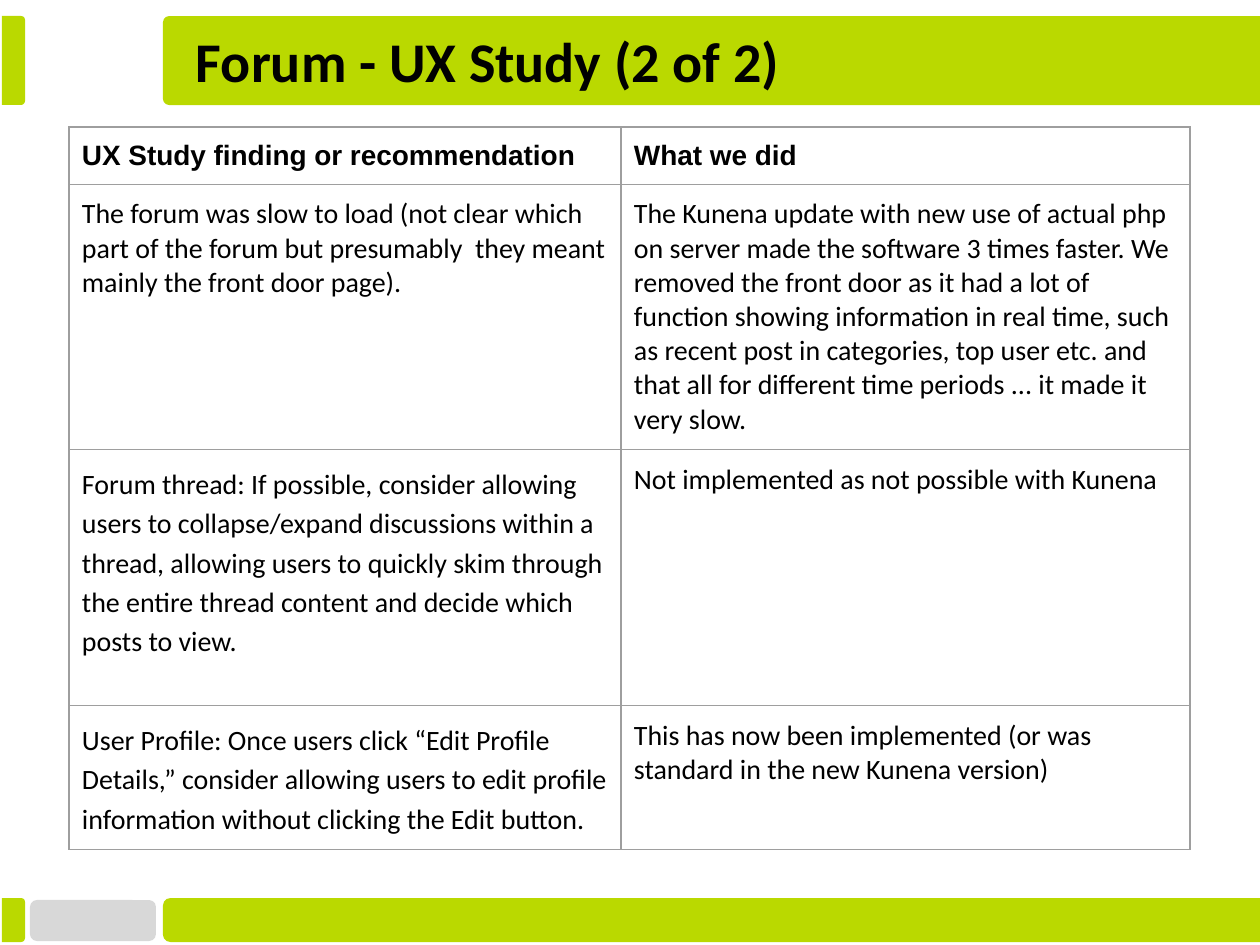
"""Build the forum UX study slide with its table of findings and actions."""
import pptx
import pptx.dml.color
import pptx.enum.shapes
import pptx.enum.text
import pptx.oxml
import pptx.oxml.ns
import pptx.util

EMU_PER_PX = 914400 / 126
COLOURS = {"lime": "BAD900", "grey": "D8D8D8", "black": "000000", "border": "9E9E9E"}
MARGIN = 13
COLUMN_WIDTHS = (552, 569)
ROW_HEIGHTS = (57, 264, 256, 144)
LINE_SPACINGS = ((1, 1), (1, 1), (1.15, 1), (1.15, 1))
FINDINGS = (
    ("UX Study finding or recommendation", "What we did"),
    (
        "The forum was slow to load (not clear which part of the forum but "
        "presumably  they meant mainly the front door page).",
        "The Kunena update with new use of actual php on server made the software "
        "3 times faster. We removed the front door as it had a lot of function "
        "showing information in real time, such as recent post in categories, top "
        "user etc. and that all for different time periods ... it made it very slow.",
    ),
    (
        "Forum thread: If possible, consider allowing users to collapse/expand "
        "discussions within a thread, allowing users to quickly skim through the "
        "entire thread content and decide which posts to view.",
        "Not implemented as not possible with Kunena",
    ),
    (
        "User Profile: Once users click “Edit Profile Details,” consider allowing "
        "users to edit profile information without clicking the Edit button.",
        "This has now been implemented (or was standard in the new Kunena version)",
    ),
)


def px(length):
    """Turn pixels into EMU."""
    return pptx.util.Emu(round(length * EMU_PER_PX))


def rgb(name):
    """Look up a named colour."""
    return pptx.dml.color.RGBColor.from_string(COLOURS[name])


def format_text(para, size, font, bold, spacing):
    """Format a paragraph and its runs."""
    para.alignment = pptx.enum.text.PP_ALIGN.LEFT
    para.line_spacing = spacing
    for span in para.runs:
        span.font.size = pptx.util.Pt(size)
        span.font.name = font
        span.font.bold = bold
        span.font.color.rgb = rgb("black")


def set_margins(holder):
    """Give a text frame or cell the same inset on all sides."""
    for side in ("left", "top", "right", "bottom"):
        setattr(holder, f"margin_{side}", px(MARGIN))


def add_block(page, kind, left, top, width, height, colour, corner):
    """Add a filled shape with rounded corners."""
    box = page.shapes.add_shape(kind, px(left), px(top), px(width), px(height))
    box.shadow.inherit = False
    box.fill.solid()
    box.fill.fore_color.rgb = rgb(colour)
    box.line.fill.background()
    box.adjustments[0] = corner
    return box


def add_bar(page, left, top, width, height, rotation, corner):
    """Add a lime bar turned so that only one end is rounded."""
    kind = pptx.enum.shapes.MSO_SHAPE.ROUND_2_SAME_RECTANGLE
    turned_left = left + (width - height) / 2
    turned_top = top + (height - width) / 2
    box = add_block(page, kind, turned_left, turned_top, height, width, "lime", corner)
    box.rotation = rotation


def add_title(page, text):
    """Place and format the title."""
    title = page.shapes.title
    title.left, title.top, title.width, title.height = map(px, (183, 23, 1187, 82))
    frame = title.text_frame
    frame.text = text
    frame.word_wrap = True
    frame.auto_size = pptx.enum.text.MSO_AUTO_SIZE.NONE
    frame.vertical_anchor = pptx.enum.text.MSO_ANCHOR.MIDDLE
    set_margins(frame)
    format_text(frame.paragraphs[0], 32, "Calibri", True, 0.9)


def add_borders(cell):
    """Draw a thin border on each side of a cell."""
    properties = cell._tc.get_or_add_tcPr()
    for side in "LRTB":
        properties.append(pptx.oxml.parse_xml(
            f'<a:ln{side} {pptx.oxml.ns.nsdecls("a")} w="9525"><a:solidFill>'
            f'<a:srgbClr val="{COLOURS["border"]}"/></a:solidFill></a:ln{side}>'
        ))


def add_findings(page):
    """Add the table of findings."""
    table = page.shapes.add_table(
        len(ROW_HEIGHTS), len(COLUMN_WIDTHS), px(69), px(127),
        px(sum(COLUMN_WIDTHS)), px(sum(ROW_HEIGHTS)),
    ).table
    table.first_row = table.horz_banding = False
    for column, width in zip(table.columns, COLUMN_WIDTHS):
        column.width = px(width)
    for index, (row, height) in enumerate(zip(table.rows, ROW_HEIGHTS)):
        row.height = px(height)
        header = index == 0
        for cell, text, spacing in zip(row.cells, FINDINGS[index], LINE_SPACINGS[index]):
            cell.text_frame.text = text
            set_margins(cell)
            add_borders(cell)
            cell.fill.background()
            font = "Arial" if header else "Calibri"
            format_text(cell.text_frame.paragraphs[0], 16, font, header, spacing)


def main():
    """Build and save the deck."""
    deck = pptx.Presentation()
    deck.slide_width, deck.slide_height = px(1260), px(945)
    page = deck.slides.add_slide(deck.slide_layouts[5])
    rounded = pptx.enum.shapes.MSO_SHAPE.ROUNDED_RECTANGLE
    add_block(page, rounded, 30, 900, 126, 41, "grey", 0.17)
    for top, height, long_corner in ((898, 44, 0.17), (16, 89, 0.07)):
        add_bar(page, 163, top, 1097, height, 270, long_corner)
        add_bar(page, 2, top, 23, height, 90, 0.17)
    add_title(page, "Forum - UX Study (2 of 2)")
    title = page.shapes.title._element
    title.getparent().append(title)
    add_findings(page)
    deck.save("out.pptx")


if __name__ == "__main__":
    main()
